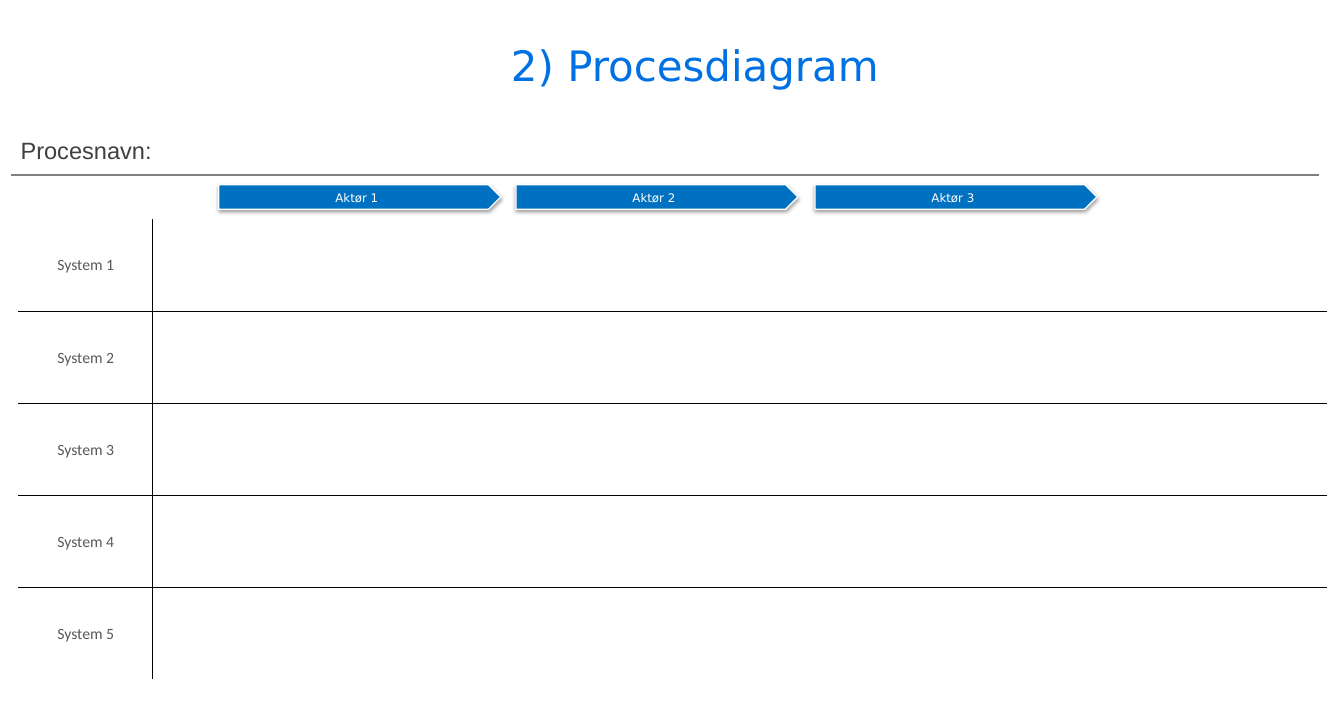
from dataclasses import dataclass

from lxml import etree
from pptx import Presentation
from pptx import util as u
from pptx.dml.color import RGBColor
from pptx.enum import shapes, text
from pptx.oxml import ns


@dataclass(frozen=True)
class Theme:
    white: str = "FFFFFF"
    black: str = "000000"
    title: str = "0071E2"
    process: str = "404040"
    system: str = "595959"
    actor: str = "0070C0"
    rule: str = "808080"
    display_font: str = "DejaVu Sans"
    process_font: str = "Arial"
    system_font: str = "Calibri"
    title_size: int = 32
    process_size: int = 18
    system_size: int = 12
    actor_size: int = 9


@dataclass(frozen=True)
class Actor:
    name: str
    left: float


THEME = Theme()
ACTORS = [Actor("Aktør 1", 2.32), Actor("Aktør 2", 5.47), Actor("Aktør 3", 8.64)]
SYSTEMS = [f"System {number}" for number in range(1, 6)]
COLUMN_WIDTHS = (1.42, 12.44)


def rgb(color: str) -> RGBColor:
    return RGBColor.from_string(color)


def add_element(parent, tag: str, **attributes):
    element = etree.SubElement(parent, ns.qn(tag))
    for name, value in attributes.items():
        element.set(name, str(value))
    return element


def place(shape, left: float, top: float, width: float, height: float) -> None:
    shape.left, shape.top = u.Inches(left), u.Inches(top)
    shape.width, shape.height = u.Inches(width), u.Inches(height)


def write(frame, words: str, font_name: str, size: int, color: str,
          align=text.PP_ALIGN.CENTER) -> None:
    frame.text = words
    paragraph = frame.paragraphs[0]
    paragraph.alignment = align
    font = paragraph.runs[0].font
    font.name, font.size = font_name, u.Pt(size)
    font.color.rgb = rgb(color)


def add_title(slide) -> None:
    title = slide.shapes.title
    place(title, 1.37, 0.34, 12, 0.73)
    frame = title.text_frame
    frame.vertical_anchor = text.MSO_ANCHOR.TOP
    frame.margin_top = u.Inches(0.08)
    write(frame, "2) Procesdiagram", THEME.display_font, THEME.title_size, THEME.title)


def add_process_name(slide) -> None:
    process = slide.shapes.add_textbox(
        u.Inches(0.12), u.Inches(1.39), u.Inches(6.93), u.Inches(0.4))
    process.text_frame.word_wrap = True
    process.text_frame.auto_size = text.MSO_AUTO_SIZE.SHAPE_TO_FIT_TEXT
    write(process.text_frame, "Procesnavn:", THEME.process_font,
          THEME.process_size, THEME.process, text.PP_ALIGN.LEFT)


def add_rule(slide) -> None:
    rule = slide.shapes.add_connector(
        shapes.MSO_CONNECTOR.STRAIGHT,
        u.Inches(0.12), u.Inches(1.86), u.Inches(13.98), u.Inches(1.86))
    rule.line.color.rgb = rgb(THEME.rule)
    rule.line.width = u.Pt(1.75)
    add_element(rule._element.spPr, "a:effectLst")


def add_actor(slide, actor: Actor) -> None:
    arrow = slide.shapes.add_shape(
        shapes.MSO_SHAPE.PENTAGON,
        u.Inches(actor.left), u.Inches(1.96), u.Inches(2.99), u.Inches(0.26))
    arrow.fill.solid()
    arrow.fill.fore_color.rgb = rgb(THEME.actor)
    arrow.line.color.rgb = rgb(THEME.white)
    arrow.line.width = u.Pt(1)

    # Soft shadow straight below the arrow
    arrow.shadow.inherit = False
    effects = arrow._element.spPr.find(ns.qn("a:effectLst"))
    shadow = add_element(effects, "a:outerShdw", blurRad=u.Pt(3.1), dist=u.Pt(1.6),
                         dir=90 * 60000, rotWithShape=0)
    add_element(add_element(shadow, "a:srgbClr", val=THEME.black), "a:alpha", val=38000)

    frame = arrow.text_frame
    frame.vertical_anchor = text.MSO_ANCHOR.MIDDLE
    write(frame, actor.name, THEME.display_font, THEME.actor_size, THEME.white)
    frame.paragraphs[0].line_spacing = 1.08


def format_cell(cell, borders: dict[str, str]) -> None:
    properties = cell._tc.get_or_add_tcPr()
    for side, color in borders.items():
        line = add_element(properties, f"a:ln{side}", w=u.Pt(1))
        add_element(add_element(line, "a:solidFill"), "a:srgbClr", val=color)
    cell.fill.solid()
    cell.fill.fore_color.rgb = rgb(THEME.white)
    cell.vertical_anchor = text.MSO_ANCHOR.MIDDLE


def add_swimlanes(slide) -> None:
    lanes = slide.shapes.add_table(
        len(SYSTEMS), len(COLUMN_WIDTHS),
        u.Inches(0.2), u.Inches(2.33), u.Inches(sum(COLUMN_WIDTHS)), u.Inches(4.88)).table
    lanes.first_row = lanes.horz_banding = False
    for column, width in zip(lanes.columns, COLUMN_WIDTHS):
        column.width = u.Inches(width)

    # Black lines inside the grid, white ones around it
    last_row, last_column = len(SYSTEMS) - 1, len(COLUMN_WIDTHS) - 1
    for row, system in enumerate(SYSTEMS):
        for column in range(len(COLUMN_WIDTHS)):
            outer = {"L": column == 0, "R": column == last_column,
                     "T": row == 0, "B": row == last_row}
            format_cell(lanes.cell(row, column),
                        {side: THEME.white if edge else THEME.black
                         for side, edge in outer.items()})
        write(lanes.cell(row, 0).text_frame, system, THEME.system_font,
              THEME.system_size, THEME.system)


def main() -> None:
    deck = Presentation()
    deck.slide_width, deck.slide_height = u.Inches(14.25), u.Inches(7.5)
    slide = deck.slides.add_slide(deck.slide_layouts[5])

    # Heading
    add_title(slide)
    add_process_name(slide)

    # Process diagram
    add_swimlanes(slide)
    add_rule(slide)
    for actor in ACTORS:
        add_actor(slide, actor)

    deck.save("out.pptx")


if __name__ == "__main__":
    main()
